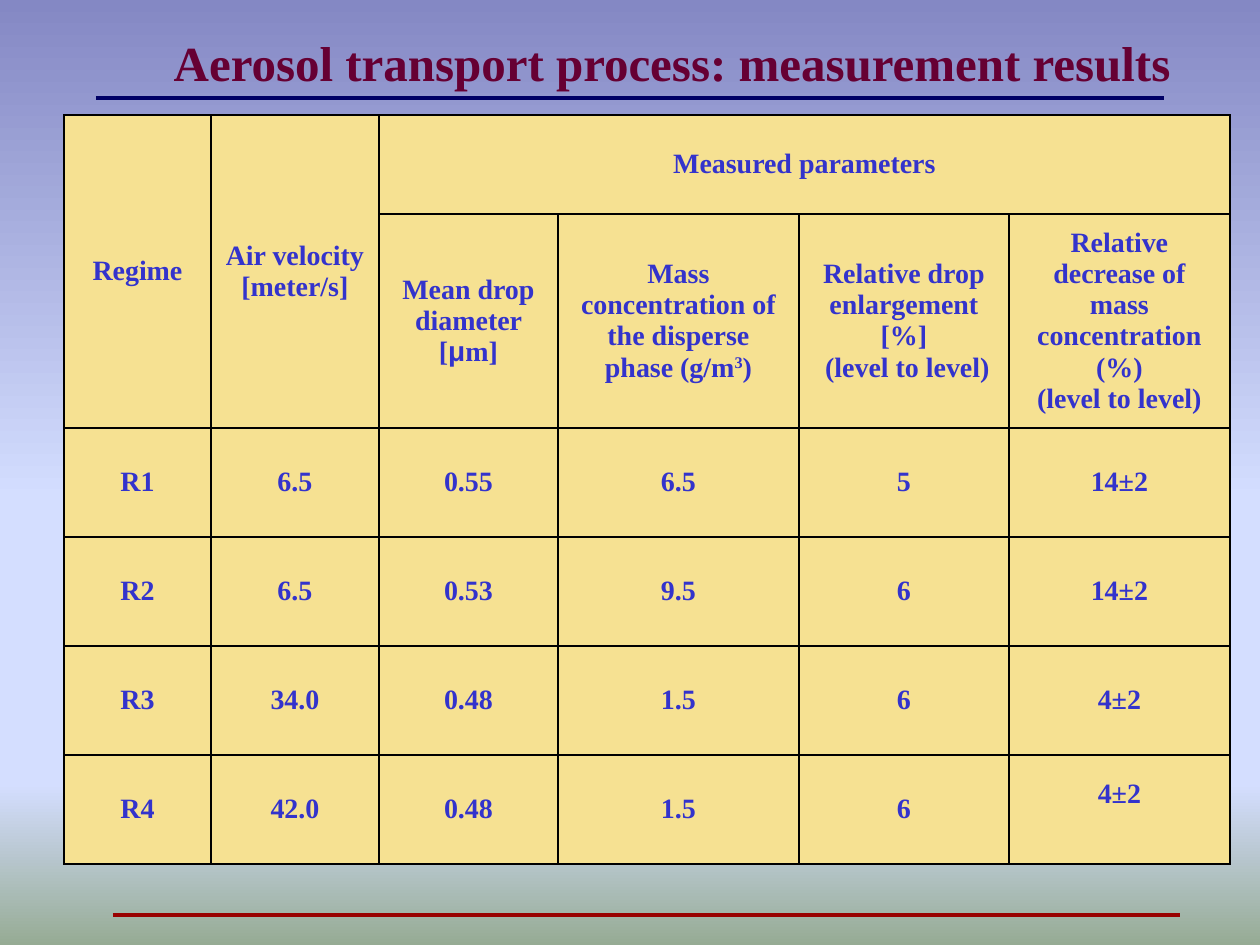
from lxml import etree
from pptx import Presentation
from pptx.dml.color import RGBColor
from pptx.enum.shapes import MSO_CONNECTOR
from pptx.enum.text import MSO_ANCHOR, PP_ALIGN
from pptx.oxml.ns import qn
from pptx.util import Emu, Pt

PX_PER_INCH = 126
STRAIGHT = MSO_CONNECTOR.STRAIGHT
MIDDLE = MSO_ANCHOR.MIDDLE
CENTER = PP_ALIGN.CENTER
SERIF, SANS = "Times New Roman", "Arial"

COLORS = {
    "title": "660033", "top_rule": "000066", "bottom_rule": "990000",
    "text": "3333CC", "cell": "F6E192", "border": "000000",
}
BACKGROUND = [(0, "8488C4"), (53, "D4DEFF"), (83, "D4DEFF"), (100, "96AB94")]

COLUMNS = [147, 168, 179, 241, 210, 221]
ROWS = [99, 214] + [109] * 4
MERGES = [(0, 0, 1, 0), (0, 1, 1, 1), (0, 2, 0, 5)]

# A cell is a list of paragraphs, a paragraph a list of runs.
HEADERS = {
    (0, 0): [["Regime"]],
    (0, 1): [["Air velocity [meter/s]"]],
    (0, 2): [["Measured parameters"]],
    (1, 2): [["Mean drop diameter [", ("μ", {"font": SANS}), "m]"]],
    (1, 3): [["Mass concentration of the disperse phase (g/m",
              ("3", {"baseline": 30}), ")"]],
    (1, 4): [["Relative drop enlargement [%]"], [" (level to level)"]],
    (1, 5): [["Relative decrease of mass concentration"], ["(%)"],
             ["(level to level)"]],
}
RESULTS = [
    ["R1", "6.5", "0.55", "6.5", "5", "14±2"],
    ["R2", "6.5", "0.53", "9.5", "6", "14±2"],
    ["R3", "34.0", "0.48", "1.5", "6", "4±2"],
    ["R4", "42.0", "0.48", "1.5", "6", "4±2"],
]


def px(value):
    return Emu(round(value * 914400 / PX_PER_INCH))


def rgb(name):
    return RGBColor.from_string(COLORS[name])


def set_background(slide):
    fill = slide.background.fill
    fill.gradient()
    fill.gradient_angle = 270
    stops = next(slide._element.iter(qn("a:gsLst")))
    for stop in list(stops):
        stops.remove(stop)
    for position, color in BACKGROUND:
        stop = etree.SubElement(stops, qn("a:gs"), pos=str(position * 1000))
        etree.SubElement(stop, qn("a:srgbClr"), val=color)


def add_rule(slide, x1, x2, y, color):
    line = slide.shapes.add_connector(STRAIGHT, px(x1), px(y), px(x2), px(y))
    line.line.color.rgb = rgb(color)
    line.line.width = Pt(2.25)
    etree.SubElement(line._element.spPr, qn("a:effectLst"))


def add_run(p, text, size, color, font=SERIF, baseline=0):
    r = p.add_run()
    r.text = text
    r.font.name = font
    r.font.size = Pt(size)
    r.font.bold = True
    r.font.color.rgb = rgb(color)
    if baseline:
        r._r.get_or_add_rPr().set("baseline", str(baseline * 1000))


def add_title(slide, text):
    sp = slide.shapes.add_textbox(px(84), px(26), px(1176), px(72))
    tf = sp.text_frame
    tf.word_wrap = True
    tf.vertical_anchor = MIDDLE
    p = tf.paragraphs[0]
    p.alignment = CENTER
    add_run(p, text, 28, "title")


def fill_cell(cell, paragraphs):
    cell.vertical_anchor = MIDDLE
    tf = cell.text_frame
    for i, runs in enumerate(paragraphs):
        p = tf.add_paragraph() if i else tf.paragraphs[0]
        p.alignment = CENTER
        for run in runs:
            text, style = (run, {}) if isinstance(run, str) else run
            add_run(p, text, 16, "text", **style)


def paint_cell(cell):
    """Give the cell its fill and four thin borders."""
    cell.fill.solid()
    cell.fill.fore_color.rgb = rgb("cell")
    tc_pr = cell._tc.get_or_add_tcPr()
    for i, side in enumerate(("lnL", "lnR", "lnT", "lnB")):
        line = etree.Element(qn("a:" + side), w=str(Pt(1)))
        solid = etree.SubElement(line, qn("a:solidFill"))
        etree.SubElement(solid, qn("a:srgbClr"), val=COLORS["border"])
        tc_pr.insert(i, line)


def add_results_table(slide):
    frame = slide.shapes.add_table(len(ROWS), len(COLUMNS), px(64), px(115),
                                   px(sum(COLUMNS)), px(sum(ROWS)))
    table = frame.table
    table.first_row = table.horz_banding = False
    for column, width in zip(table.columns, COLUMNS):
        column.width = px(width)
    for row, height in zip(table.rows, ROWS):
        row.height = px(height)
    for cell in table.iter_cells():
        paint_cell(cell)
    for top, left, bottom, right in MERGES:
        table.cell(top, left).merge(table.cell(bottom, right))
    for (row, col), paragraphs in HEADERS.items():
        fill_cell(table.cell(row, col), paragraphs)
    for row, values in enumerate(RESULTS, start=2):
        for col, value in enumerate(values):
            fill_cell(table.cell(row, col), [[value]])
    # The last value sits half a line above the middle of its row.
    table.cell(len(ROWS) - 1, len(COLUMNS) - 1).margin_bottom = px(37)


def main():
    prs = Presentation()
    prs.slide_width, prs.slide_height = px(1260), px(945)
    slide = prs.slides.add_slide(prs.slide_layouts[6])
    set_background(slide)
    add_rule(slide, 96, 1164, 98, "top_rule")
    add_rule(slide, 113, 1180, 915, "bottom_rule")
    add_results_table(slide)
    add_title(slide, "Aerosol transport process: measurement results")
    prs.save("out.pptx")


if __name__ == "__main__":
    main()
